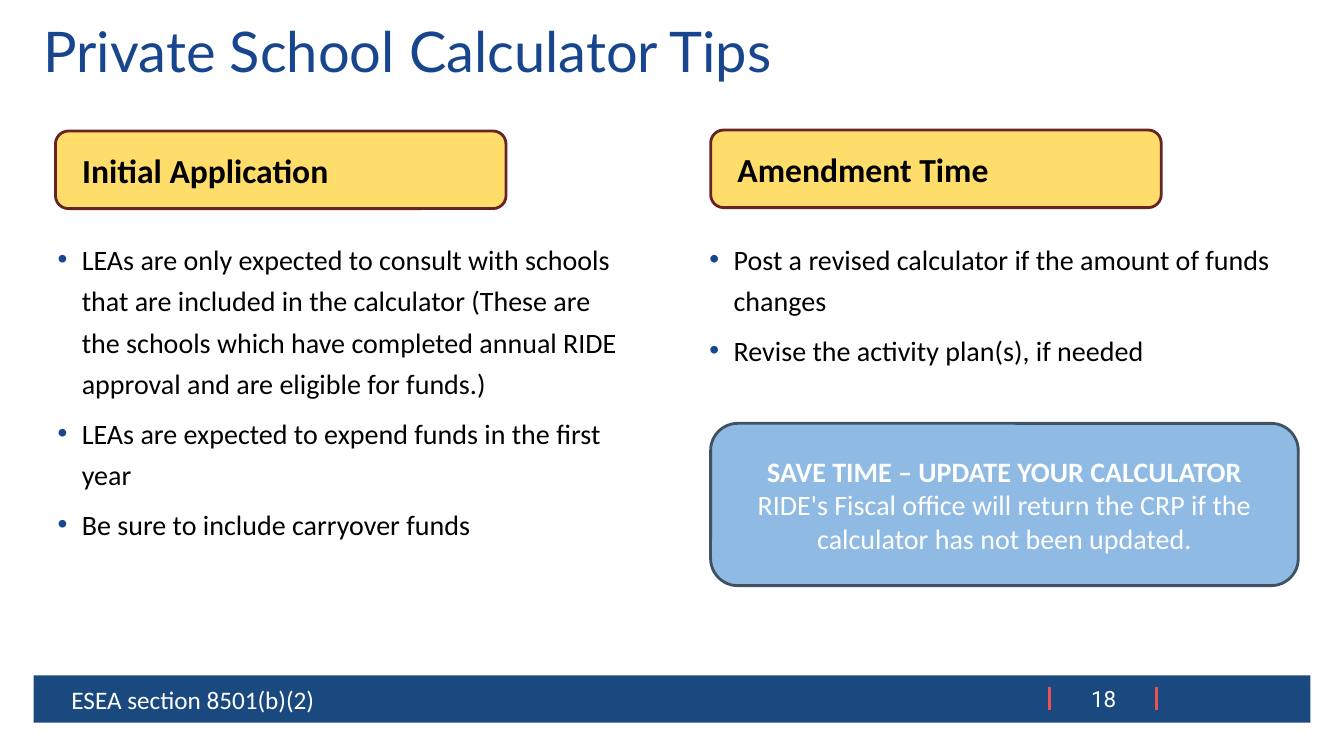
from dataclasses import dataclass

from lxml import etree
from pptx import Presentation
from pptx import util as u
from pptx.dml.color import RGBColor
from pptx.enum import shapes, text
from pptx.oxml.ns import qn


@dataclass(frozen=True)
class Theme:
    navy: str = "17468E"
    footer: str = "1A497F"
    tick: str = "EC5153"
    yellow: str = "FFDD6B"
    maroon: str = "672424"
    sky: str = "8FBAE4"
    slate: str = "3F5264"
    white: str = "FFFFFF"
    black: str = "000000"
    font: str = "Calibri"
    title_font: str = "Lato"
    number_font: str = "Roboto"
    title_size: int = 40
    header_size: int = 24
    body_size: int = 20
    citation_size: int = 18
    number_size: int = 16


THEME = Theme()
WIDTH, HEIGHT = u.Inches(13.33), u.Inches(7.5)
COLUMNS, ROWS = 40, 30

# Grid positions shared by several parts
MARGIN, CONTENT = 1, 38
RIGHT_CARD = 21.15
BODY_ROW, BODY_ROWS = 9.12, 16.2


def place(column, row, columns, rows):
    """Turn grid units into left, top, width and height."""
    across, down = WIDTH / COLUMNS, HEIGHT / ROWS
    return [round(n) for n in (column * across, row * down,
                               columns * across, rows * down)]


def color(value):
    return RGBColor.from_string(value)


def add_span(para, words, size, ink, font=THEME.font, bold=False):
    span = para.add_run()
    span.text = words
    span.font.name = font
    span.font.size = u.Pt(size)
    span.font.color.rgb = color(ink)
    span.font.bold = bold


def add_box(page, area, anchor=text.MSO_ANCHOR.TOP):
    frame = page.shapes.add_textbox(*place(*area)).text_frame
    frame.word_wrap = True
    frame.vertical_anchor = anchor
    return frame


def add_panel(page, area, fill, line=None):
    kind = shapes.MSO_SHAPE.ROUNDED_RECTANGLE if line else shapes.MSO_SHAPE.RECTANGLE
    panel = page.shapes.add_shape(kind, *place(*area))
    panel.shadow.inherit = False
    panel.fill.solid()
    panel.fill.fore_color.rgb = color(fill)
    if line:
        panel.line.color.rgb = color(line)
        panel.line.width = u.Pt(2)
    else:
        panel.line.fill.background()
    panel.text_frame.word_wrap = True
    panel.text_frame.vertical_anchor = text.MSO_ANCHOR.MIDDLE
    return panel.text_frame


def indent(para, left, first=0.0):
    props = para._p.get_or_add_pPr()
    props.set("marL", str(u.Inches(left)))
    props.set("indent", str(u.Inches(first)))
    return props


def add_bullets(page, area, items, left):
    frame = add_box(page, area)
    for number, item in enumerate(items):
        para = frame.add_paragraph() if number else frame.paragraphs[0]
        para.line_spacing = 1.23
        para.space_before = u.Pt(6 if number else 0)
        props = indent(para, left, -0.24)
        tint = etree.SubElement(props, qn("a:buClr"))
        etree.SubElement(tint, qn("a:srgbClr"), val=THEME.navy)
        etree.SubElement(props, qn("a:buFont"), typeface="Arial")
        etree.SubElement(props, qn("a:buChar"), char="•")
        add_span(para, item, THEME.body_size, THEME.black)


def add_header(page, column, row, words):
    frame = add_panel(page, (column, row, 13.41, 3.08), THEME.yellow, THEME.maroon)
    para = frame.paragraphs[0]
    para.alignment = text.PP_ALIGN.LEFT
    indent(para, 0.13)
    add_span(para, words, THEME.header_size, THEME.black, bold=True)


def add_callout(page, area, heading, message):
    frame = add_panel(page, area, THEME.sky, THEME.slate)
    for para, words, bold in ((frame.paragraphs[0], heading, True),
                              (frame.add_paragraph(), message, False)):
        para.alignment = text.PP_ALIGN.CENTER
        add_span(para, words, THEME.body_size, THEME.white, bold=bold)


def add_tick(page, column):
    left, top, _, height = place(column, 27.28, 0, 0.88)
    tick = page.shapes.add_connector(shapes.MSO_CONNECTOR.STRAIGHT,
                                     left, top, left, top + height)
    tick.line.color.rgb = color(THEME.tick)
    tick.line.width = u.Pt(2.25)
    etree.SubElement(tick._element.spPr, qn("a:effectLst"))


def add_title(page, words):
    para = add_box(page, (MARGIN, 0.76, CONTENT, 3.08)).paragraphs[0]
    para.line_spacing = 0.9
    add_span(para, words, THEME.title_size, THEME.navy, THEME.title_font)


def add_footer(page, citation, number):
    add_panel(page, (MARGIN, 26.8, CONTENT, 1.88), THEME.footer)
    for column in (31.23, 34.41):
        add_tick(page, column)

    para = add_box(page, (31.89, 27, 1.92, 1.48), text.MSO_ANCHOR.MIDDLE).paragraphs[0]
    para.alignment = text.PP_ALIGN.CENTER
    add_span(para, number, THEME.number_size, THEME.white, THEME.number_font)

    para = add_box(page, (0.69, 26.84, 20, 1.68)).paragraphs[0]
    para.line_spacing = 1.1
    indent(para, 0.38)
    add_span(para, citation, THEME.citation_size, THEME.white)


def main():
    deck = Presentation()
    deck.slide_width, deck.slide_height = WIDTH, HEIGHT
    page = deck.slides.add_slide(deck.slide_layouts[6])

    # Frame of the slide
    add_footer(page, "ESEA section 8501(b)(2)", "18")
    add_title(page, "Private School Calculator Tips")

    # Left column
    add_header(page, 1.65, 5.2, "Initial Application")
    add_bullets(page, (MARGIN, BODY_ROW, 18.18, BODY_ROWS), [
        "LEAs are only expected to consult with schools that are included in the "
        "calculator (These are the schools which have completed annual RIDE "
        "approval and are eligible for funds.)",
        "LEAs are expected to expend funds in the first year",
        "Be sure to include carryover funds",
    ], left=0.38)

    # Right column
    add_header(page, RIGHT_CARD, 5.16, "Amendment Time")
    add_bullets(page, (20.79, BODY_ROW, 18.21, BODY_ROWS), [
        "Post a revised calculator if the amount of funds changes",
        "Revise the activity plan(s), if needed",
    ], left=0.25)
    add_callout(page, (RIGHT_CARD, 16.8, 17.49, 6.44),
                "SAVE TIME – UPDATE YOUR CALCULATOR",
                "RIDE's Fiscal office will return the CRP if the calculator "
                "has not been updated.")

    deck.save("out.pptx")


if __name__ == "__main__":
    main()
